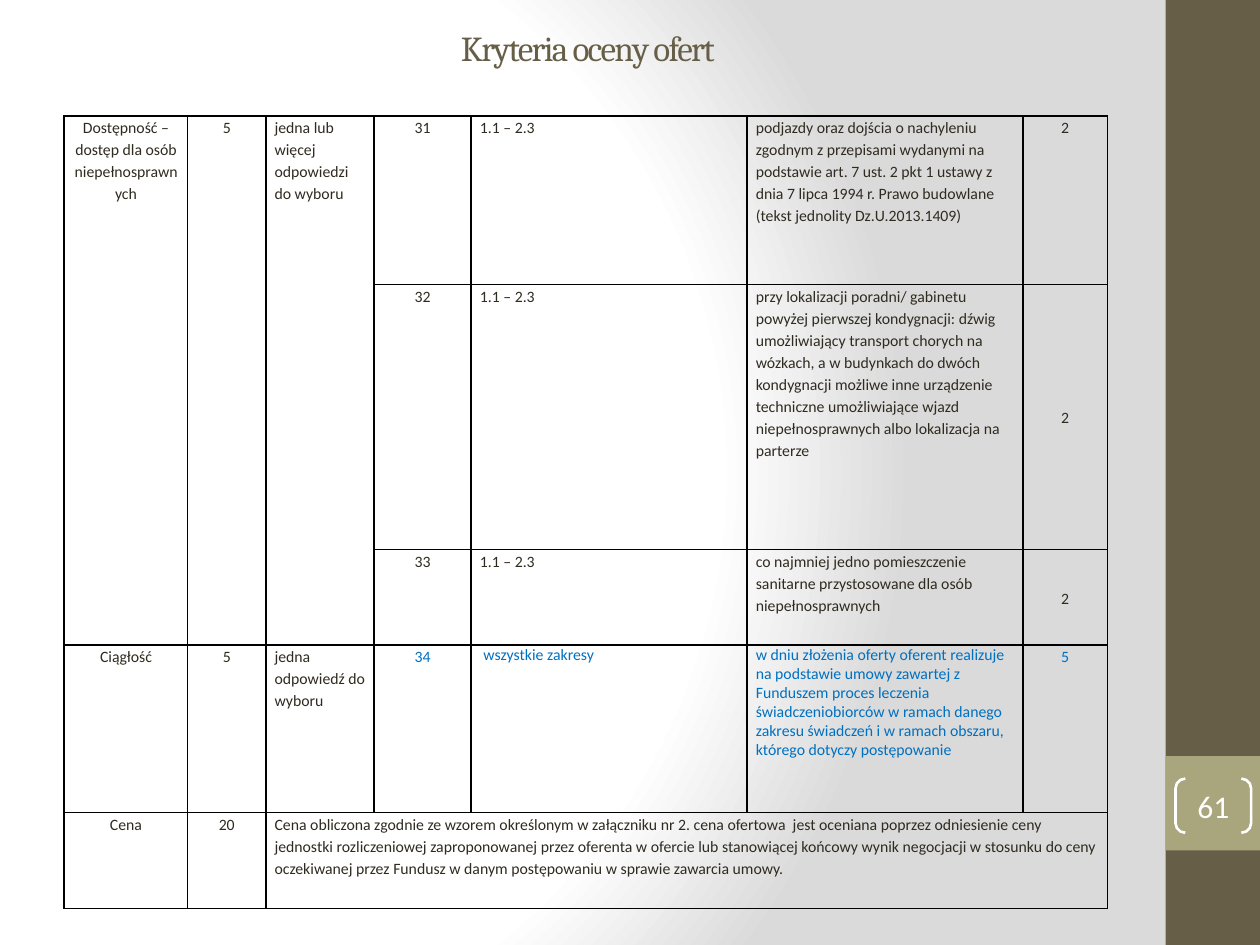
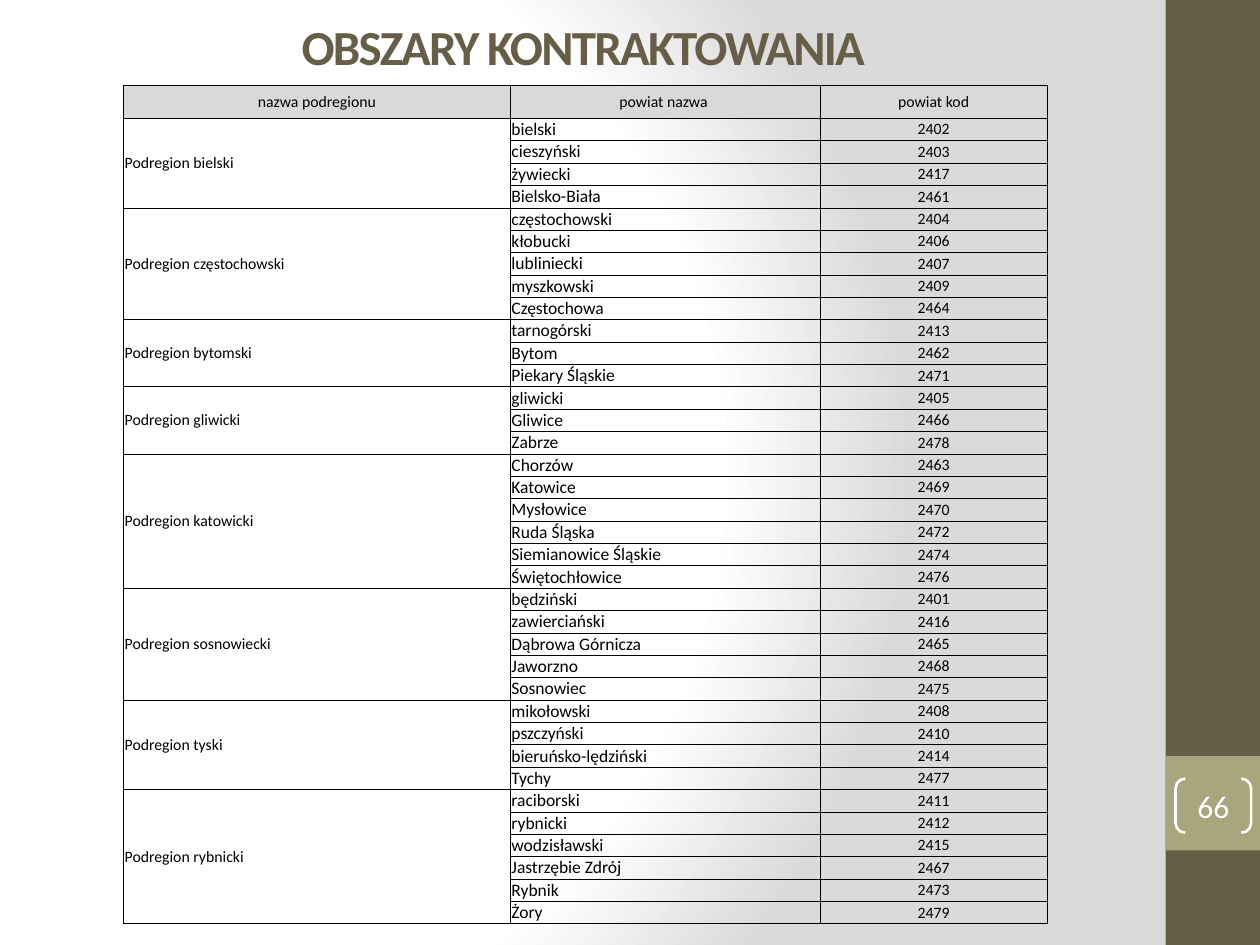
from collections import namedtuple
from dataclasses import dataclass

from pptx import Presentation
from pptx import oxml
from pptx import util as u
from pptx.dml.color import RGBColor
from pptx.enum import shapes, text
from pptx.oxml import ns

PX = u.Inches(1) // 100
Box = namedtuple("Box", "left top width height")
CENTER, LEFT = text.PP_ALIGN.CENTER, text.PP_ALIGN.LEFT
MIDDLE, TOP = text.MSO_ANCHOR.MIDDLE, text.MSO_ANCHOR.TOP


@dataclass(frozen=True)
class Theme:
    """Colours, fonts and type sizes shared by the slides."""
    band: str = "675E47"
    badge: str = "A9A57C"
    white: str = "FFFFFF"
    edge: str = "DADADA"
    header: str = "D9D9D9"
    ink: str = "2F2B20"
    changed: str = "0070C0"
    black: str = "000000"
    body_font: str = "Calibri"
    serif_font: str = "Cambria"
    heading: int = 28
    subheading: int = 20
    number: int = 18
    county: int = 10
    small: int = 9


THEME = Theme()
SLIDE = Box(0, 0, 1000, 750)
BAND = Box(925, 0, 75, 750)
BADGE = Box(925, 600, 75, 75)
BRACKETS = Box(8, 18, 60, 43)

CRITERIA_COLUMNS = [98, 62, 86, 77, 219, 219, 67]
CRITERIA_ROWS = [134, 210, 76, 133, 76]
CRITERIA_MERGES = [(0, 0, 2, 0), (0, 1, 2, 1), (0, 2, 2, 2), (4, 2, 4, 6)]
CRITERIA = [
    ["Dostępność – dostęp dla osób niepełnosprawnych", "5",
     "jedna lub więcej odpowiedzi do wyboru", "31", "1.1 – 2.3",
     "podjazdy oraz dojścia o nachyleniu zgodnym z przepisami wydanymi na podstawie "
     "art. 7 ust. 2 pkt 1 ustawy z dnia 7 lipca 1994 r. Prawo budowlane "
     "(tekst jednolity Dz.U.2013.1409)", "2"],
    [None, None, None, "32", "1.1 – 2.3",
     "przy lokalizacji poradni/ gabinetu powyżej pierwszej kondygnacji: dźwig "
     "umożliwiający transport chorych na wózkach, a w budynkach do dwóch kondygnacji "
     "możliwe inne urządzenie techniczne umożliwiające wjazd niepełnosprawnych albo "
     "lokalizacja na parterze", "2"],
    [None, None, None, "33", "1.1 – 2.3",
     "co najmniej jedno pomieszczenie sanitarne przystosowane dla osób "
     "niepełnosprawnych", "2"],
    ["Ciągłość", "5", "jedna odpowiedź do wyboru", "34", " wszystkie zakresy",
     "w dniu złożenia oferty oferent realizuje na podstawie umowy zawartej z Funduszem "
     "proces leczenia świadczeniobiorców w ramach danego zakresu świadczeń i w ramach "
     "obszaru, którego dotyczy postępowanie", "5"],
    ["Cena", "20",
     "Cena obliczona zgodnie ze wzorem określonym w załączniku nr 2. cena ofertowa  jest "
     "oceniana poprzez odniesienie ceny jednostki rozliczeniowej zaproponowanej przez "
     "oferenta w ofercie lub stanowiącej końcowy wynik negocjacji w stosunku do ceny "
     "oczekiwanej przez Fundusz w danym postępowaniu w sprawie zawarcia umowy.",
     None, None, None, None],
]

AREA_COLUMNS = [307, 246, 180]
AREA_HEADER = ["nazwa podregionu", "powiat nazwa ", "powiat kod"]
AREA_HEADER_HEIGHT = 26
AREAS = {
    "bielski": {"bielski": 2402, "cieszyński": 2403, "żywiecki": 2417,
                "Bielsko-Biała": 2461},
    "częstochowski": {"częstochowski": 2404, "kłobucki": 2406, "lubliniecki": 2407,
                      "myszkowski": 2409, "Częstochowa": 2464},
    "bytomski": {"tarnogórski": 2413, "Bytom": 2462, "Piekary Śląskie": 2471},
    "gliwicki": {"gliwicki": 2405, "Gliwice": 2466, "Zabrze": 2478},
    "katowicki": {"Chorzów": 2463, "Katowice": 2469, "Mysłowice": 2470,
                  "Ruda Śląska": 2472, "Siemianowice Śląskie": 2474,
                  "Świętochłowice": 2476},
    "sosnowiecki": {"będziński": 2401, "zawierciański": 2416, "Dąbrowa Górnicza": 2465,
                    "Jaworzno": 2468, "Sosnowiec": 2475},
    "tyski": {"mikołowski": 2408, "pszczyński": 2410, "bieruńsko-lędziński": 2414,
              "Tychy": 2477},
    "rybnicki": {"raciborski": 2411, "rybnicki": 2412, "wodzisławski": 2415,
                 "Jastrzębie Zdrój": 2467, "Rybnik": 2473, "Żory": 2479},
}


def assign(target, values):
    """Set every attribute named in values on target."""
    for name, value in values.items():
        setattr(target, name, value)


def emu(box):
    """Turn a box in px into EMU."""
    return [side * PX for side in box]


def insets(left, top, right, bottom):
    """Return margin values in EMU."""
    names = ("margin_left", "margin_top", "margin_right", "margin_bottom")
    return dict(zip(names, emu((left, top, right, bottom))))


def write(frame, words, size, color, font=THEME.body_font, bold=False, align=CENTER,
          spacing=None):
    """Put one formatted paragraph into a text frame and return its run."""
    paragraph = frame.paragraphs[0]
    assign(paragraph, {"alignment": align, "line_spacing": spacing})
    run = paragraph.add_run()
    run.text = words
    assign(run.font, {"name": font, "size": u.Pt(size), "bold": bold})
    run.font.color.rgb = RGBColor.from_string(color)
    return run


def set_background(master):
    """Give the master its radial white to grey background."""
    master.background.fill.solid()
    stops = "".join(
        f'<a:gs pos="{place * 1000}"><a:srgbClr val="{color}"/></a:gs>'
        for place, color in ((0, THEME.white), (75, THEME.white), (100, THEME.edge)))
    gradient = oxml.parse_xml(
        f'<a:gradFill {ns.nsdecls("a")} rotWithShape="1"><a:gsLst>{stops}</a:gsLst>'
        '<a:path path="circle"><a:fillToRect l="20000" t="50000" r="100000" b="50000"/>'
        '</a:path></a:gradFill>')
    properties = master.element.find(".//" + ns.qn("p:bgPr"))
    properties.replace(properties[0], gradient)


def set_bands(master, slide):
    """Draw the side band and number badge and move them to the master."""
    for order, (box, color) in enumerate(((BAND, THEME.band), (BADGE, THEME.badge))):
        band = slide.shapes.add_shape(shapes.MSO_SHAPE.RECTANGLE, *emu(box))
        band.shadow.inherit = False
        band.fill.solid()
        band.fill.fore_color.rgb = RGBColor.from_string(color)
        band.line.fill.background()
        band.element.nvSpPr.cNvPr.set("id", str(100 + order))
        master.shapes.element.insert(2 + order, band.element)


def add_title(slide, box, words, size, font, bold=False, anchor=MIDDLE):
    """Place and format the title placeholder."""
    title = slide.shapes.title
    assign(title, dict(zip(box._fields, emu(box))))
    assign(title.text_frame, {"word_wrap": True, "vertical_anchor": anchor,
                              "auto_size": text.MSO_AUTO_SIZE.NONE,
                              **insets(10, 0, 10, 0)})
    run = write(title.text_frame, words, size, THEME.band, font, bold)
    run.font.element.set("spc", "-100") if hasattr(run.font, "element") else \
        run._r.get_or_add_rPr().set("spc", "-100")


def add_number(slide, box, number):
    """Put the slide number in brackets inside the badge box."""
    place = Box(box.left + BRACKETS.left, box.top + BRACKETS.top,
                BRACKETS.width, BRACKETS.height)
    brackets = slide.shapes.add_shape(shapes.MSO_SHAPE.DOUBLE_BRACKET, *emu(place))
    brackets.shadow.inherit = False
    brackets.adjustments[0] = 0.18
    brackets.fill.background()
    brackets.line.color.rgb = RGBColor.from_string(THEME.white)
    brackets.line.width = u.Pt(1.5)
    assign(brackets.text_frame, {"vertical_anchor": MIDDLE, **insets(0, 0, 0, 0)})
    write(brackets.text_frame, str(number), THEME.number, THEME.white)


def add_grid(slide, box, columns, rows, border):
    """Add a plain unfilled table with black borders; rows are in EMU."""
    grid = slide.shapes.add_table(len(rows), len(columns), *emu(box)).table
    assign(grid, {"first_row": False, "horz_banding": False})
    for column, width in zip(grid.columns, columns):
        column.width = width * PX
    for row, height in zip(grid.rows, rows):
        row.height = height
    for cell in grid.iter_cells():
        properties = cell._tc.get_or_add_tcPr()
        for side in "LRTB":
            properties.append(oxml.parse_xml(
                f'<a:ln{side} {ns.nsdecls("a")} w="{u.Pt(border)}"><a:solidFill>'
                f'<a:srgbClr val="{THEME.black}"/></a:solidFill></a:ln{side}>'))
        cell.fill.background()
    return grid


def add_criteria(slide, box):
    """Fill the table of offer criteria."""
    grid = add_grid(slide, box, CRITERIA_COLUMNS, emu(CRITERIA_ROWS), 1)
    for top, left, bottom, right in CRITERIA_MERGES:
        grid.cell(top, left).merge(grid.cell(bottom, right))
    for r, row in enumerate(CRITERIA):
        for c, words in enumerate(row):
            if words is None:
                continue
            cell = grid.cell(r, c)
            changed = r == 3 and c >= 3
            anchor = MIDDLE if c == 6 and r in (1, 2) else TOP
            assign(cell, {"vertical_anchor": anchor, **insets(7, 0, 7, 0)})
            write(cell.text_frame, words, THEME.small,
                  THEME.changed if changed else THEME.ink,
                  align=CENTER if c in (0, 1, 3, 6) else LEFT,
                  spacing=1.0 if changed and c in (4, 5) else 1.15)


def add_areas(slide, box):
    """Fill the table of subregions with their counties and codes."""
    count = sum(map(len, AREAS.values()))
    header = AREA_HEADER_HEIGHT * PX
    rows = [header] + [(box.height * PX - header) // count] * count
    grid = add_grid(slide, box, AREA_COLUMNS, rows, 0.5)

    def fill_cell(r, c, words, size=THEME.small, align=CENTER):
        """Write one cell and return it."""
        cell = grid.cell(r, c)
        assign(cell, {"vertical_anchor": MIDDLE, **insets(1, 0, 1, 0)})
        write(cell.text_frame, words, size, THEME.black, align=align)
        return cell

    for c, words in enumerate(AREA_HEADER):
        cell = fill_cell(0, c, words)
        cell.fill.solid()
        cell.fill.fore_color.rgb = RGBColor.from_string(THEME.header)
    r = 1
    for subregion, counties in AREAS.items():
        grid.cell(r, 0).merge(grid.cell(r + len(counties) - 1, 0))
        fill_cell(r, 0, f"Podregion {subregion}", align=LEFT)
        for r, (county, code) in enumerate(counties.items(), r):
            fill_cell(r, 1, county, THEME.county, LEFT)
            fill_cell(r, 2, str(code))
        r += 1


def main():
    """Build both slides and save the presentation."""
    deck = Presentation()
    assign(deck, {"slide_width": SLIDE.width * PX, "slide_height": SLIDE.height * PX})
    title_only = deck.slide_layouts[5]

    criteria = deck.slides.add_slide(title_only)
    set_background(deck.slide_master)
    set_bands(deck.slide_master, criteria)
    add_title(criteria, Box(50, 21, 833, 55), "Kryteria oceny ofert",
              THEME.subheading, THEME.serif_font, anchor=TOP)
    add_criteria(criteria, Box(51, 92, 827, 630))
    add_number(criteria, BADGE, 61)

    areas = deck.slides.add_slide(title_only)
    add_title(areas, Box(50, 5, 833, 63), "OBSZARY KONTRAKTOWANIA ",
              THEME.heading, THEME.body_font, bold=True)
    add_number(areas, BADGE, 66)
    add_areas(areas, Box(98, 68, 732, 666))

    deck.save("out.pptx")


if __name__ == "__main__":
    main()
